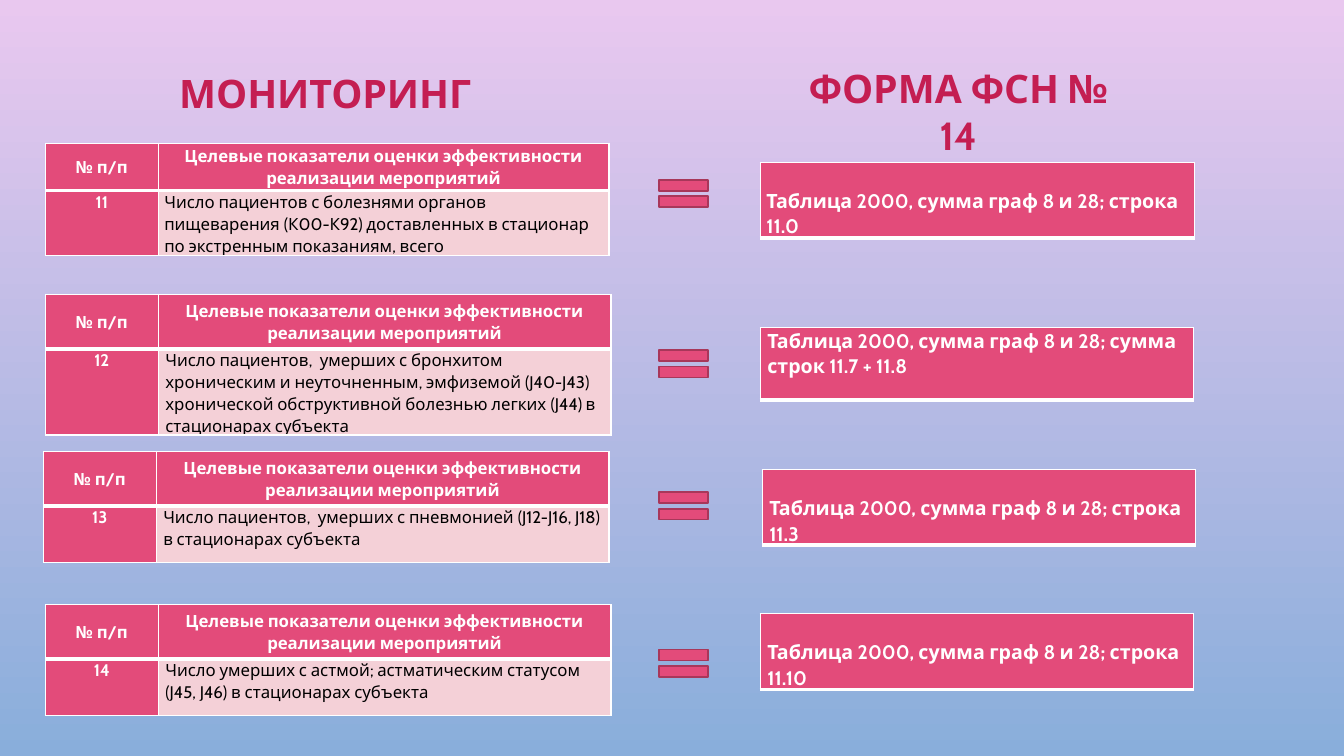
"""Build the slide that matches monitoring indicators with lines of form FSN No. 14."""
from lxml import etree
from pptx import Presentation
from pptx import util as u
from pptx.dml.color import RGBColor
from pptx.enum import shapes, text
from pptx.oxml.ns import qn


class Theme:
    font = "Cabin"
    heading_size, formula_size, table_size = 28, 14, 12
    heading, pink, pale, outline = "C41E52", "E34B7A", "F4D0D7", "A8375A"
    white, black = "FFFFFF", "000000"
    sky_top, sky_bottom = "E9C8EF", "89AEDB"


def write(frame, words, size, color, bold=True, centered=True, spacing=1.0):
    """Put one formatted paragraph into a text frame."""
    frame.word_wrap = True
    frame.text = words
    paragraph = frame.paragraphs[0]
    paragraph.alignment = text.PP_ALIGN.CENTER if centered else text.PP_ALIGN.LEFT
    paragraph.line_spacing = spacing
    for run in paragraph.runs:
        run.font.name = Theme.font
        run.font.size = u.Pt(size)
        run.font.bold = bold
        run.font.color.rgb = RGBColor.from_string(color)


def fill_cell(cell, words, size, fill, color, bold, centered, margin, top, borders):
    """Write a table cell with its margins, fill and white borders."""
    cell.margin_left = cell.margin_right = u.Inches(margin)
    cell.margin_top, cell.margin_bottom = u.Inches(top), 0
    write(cell.text_frame, words, size, color, bold, centered, 1.07)
    properties = cell._tc.get_or_add_tcPr()
    for side, points in zip("LRTB", borders):
        line = etree.SubElement(properties, qn(f"a:ln{side}"), w=str(u.Pt(points)))
        solid = etree.SubElement(line, qn("a:solidFill"))
        etree.SubElement(solid, qn("a:srgbClr"), val=Theme.white)
    cell.fill.solid()
    cell.fill.fore_color.rgb = RGBColor.from_string(fill)


presentation = Presentation()
presentation.slide_width, presentation.slide_height = u.Inches(13.33), u.Inches(7.5)
slide = presentation.slides.add_slide(presentation.slide_layouts[6])

background = slide.background.fill
background.gradient()
background.gradient_angle = 270
for stop, position, color in zip(background.gradient_stops, (0, 1), (Theme.sky_top, Theme.sky_bottom)):
    stop.position = position
    stop.color.rgb = RGBColor.from_string(color)

headings = [
    ("МОНИТОРИНГ", (0.56, 0.47, 5.33, 1.1), text.MSO_ANCHOR.BOTTOM, 0.41, 0.85),
    ("ФОРМА ФСН № 14", (7.78, 0.59, 3.45, 0.57), text.MSO_ANCHOR.TOP, 0.05, 1.0),
]
for words, place, anchor, bottom, spacing in headings:
    frame = slide.shapes.add_textbox(*map(u.Inches, place)).text_frame
    frame.vertical_anchor = anchor
    frame.margin_bottom = u.Inches(bottom)
    write(frame, words, Theme.heading_size, Theme.heading, spacing=spacing)

column_titles = ("№ п/п", "Целевые показатели оценки эффективности реализации мероприятий")
formula_start = "Таблица 2000, сумма граф 8 и 28; "
indicators = [
    ("11", "Число пациентов с болезнями органов пищеварения (К00-К92) доставленных в стационар "
     "по экстренным показаниям, всего",
     (0.45, 1.42), (1.12, 4.47), (0.47, 0.63), 0.06, 1.69,
     "строка 11.0", (7.54, 1.61, 4.31, 0.72), 0.25),
    ("12", "Число пациентов,  умерших с бронхитом хроническим и неуточненным, эмфиземой (J40-J43) "
     "хронической обструктивной болезнью легких (J44) в стационарах субъекта",
     (0.45, 2.92), (1.12, 4.49), (0.54, 0.85), 0.07, 3.38,
     "сумма строк 11.7 + 11.8", (7.54, 3.25, 4.3, 0.72), 0),
    ("13", "Число пациентов,  умерших с пневмонией (J12-J16, J18) в стационарах субъекта",
     (0.43, 4.48), (1.12, 4.49), (0.54, 0.56), 0.07, 4.79,
     "строка 11.3", (7.56, 4.66, 4.3, 0.72), 0.25),
    ("14", "Число умерших с астмой; астматическим статусом (J45, J46) в стационарах субъекта",
     (0.45, 6), (1.12, 4.49), (0.54, 0.56), 0.07, 6.35,
     "строка 11.10", (7.54, 6.09, 4.3, 0.72), 0.25),
]
for number, indicator, corner, widths, heights, margin, sign_top, lines, place, top in indicators:
    size = (sum(widths), sum(heights))
    table = slide.shapes.add_table(2, 2, *map(u.Inches, corner + size)).table
    table.horz_banding = False
    for column, width in zip(table.columns, widths):
        column.width = u.Inches(width)
    for row, height in zip(table.rows, heights):
        row.height = u.Inches(height)
    for index, title in enumerate(column_titles):
        cell = table.cell(0, index)
        cell.vertical_anchor = text.MSO_ANCHOR.MIDDLE
        fill_cell(cell, title, Theme.table_size, Theme.pink, Theme.white, True, True,
                  margin, 0, (1, 1, 1, 3))
    fill_cell(table.cell(1, 0), number, Theme.table_size, Theme.pink, Theme.white, True, True,
              margin, 0, (1, 1, 3, 1))
    fill_cell(table.cell(1, 1), indicator, Theme.table_size, Theme.pale, Theme.black, False, False,
              margin, 0, (1, 1, 3, 1))

    formula = slide.shapes.add_table(1, 1, *map(u.Inches, place)).table
    formula.horz_banding = False
    fill_cell(formula.cell(0, 0), formula_start + lines, Theme.formula_size, Theme.pink, Theme.white,
              True, False, margin, top, (1, 1, 1, 3))

    equal_sign = slide.shapes.add_shape(
        shapes.MSO_SHAPE.MATH_EQUAL, *map(u.Inches, (6.45, sign_top, 0.66, 0.46)))
    equal_sign.shadow.inherit = False
    equal_sign.fill.solid()
    equal_sign.fill.fore_color.rgb = RGBColor.from_string(Theme.pink)
    equal_sign.line.color.rgb = RGBColor.from_string(Theme.outline)
    equal_sign.line.width = u.Pt(1.25)

presentation.save("out.pptx")
